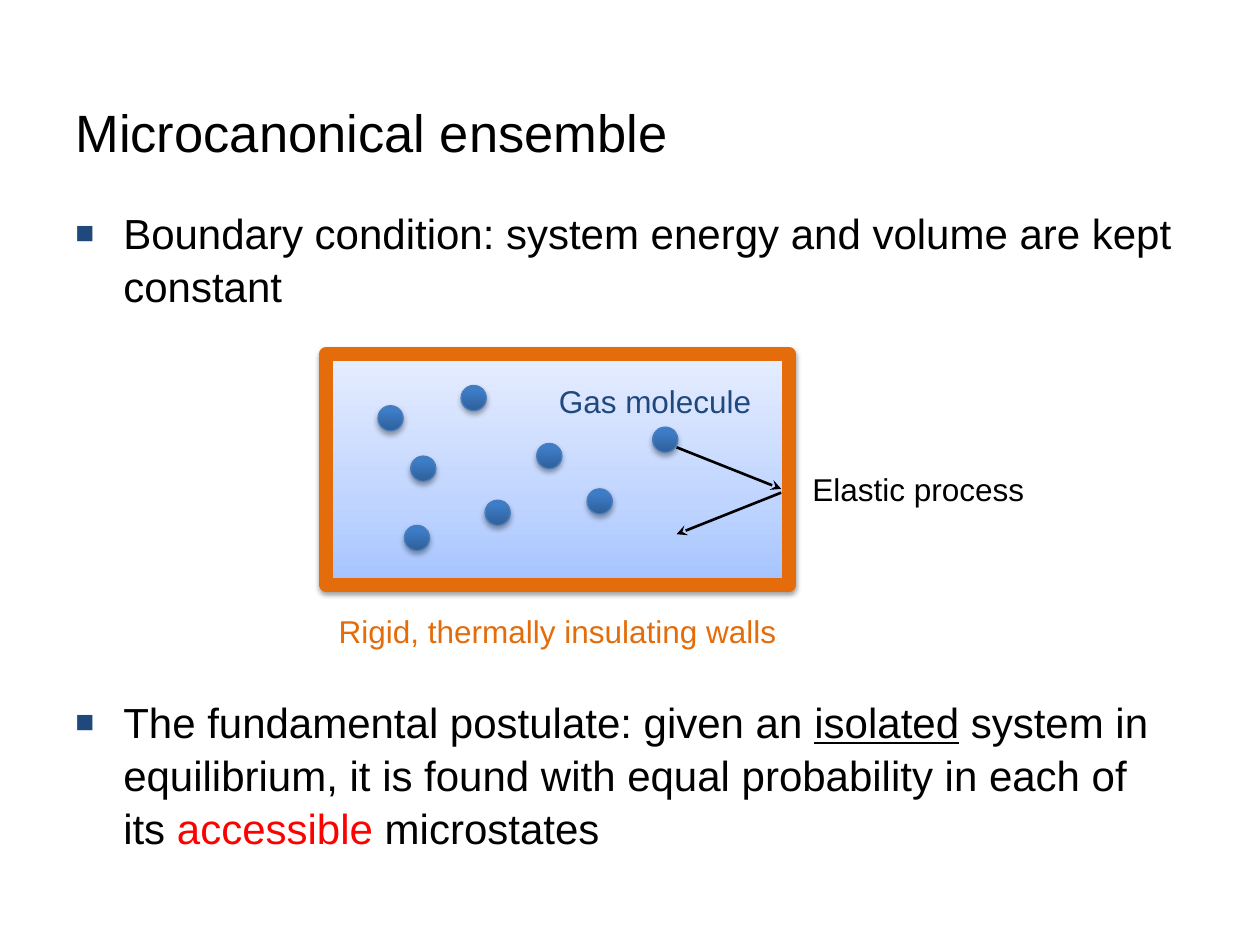
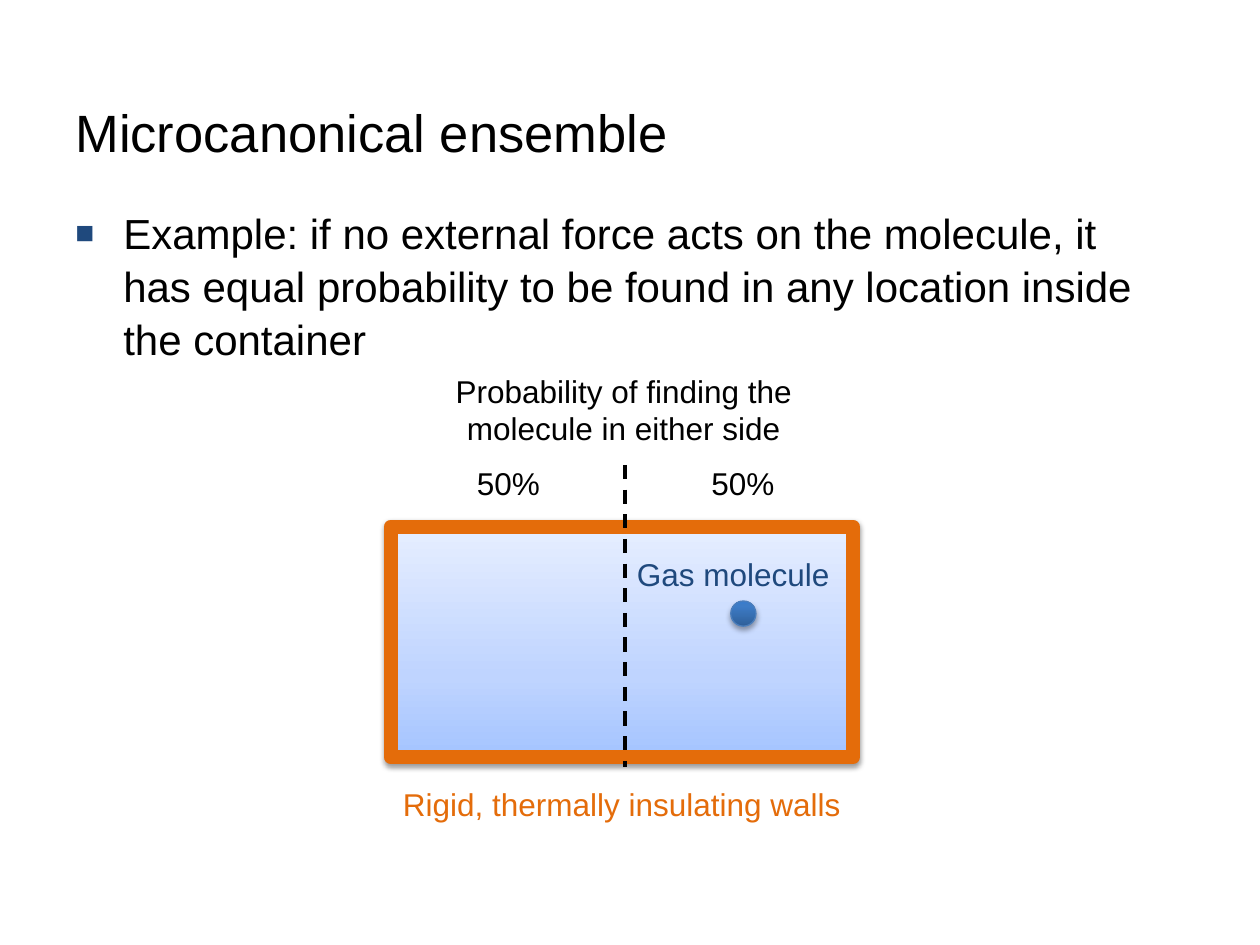
"""Two slides on the microcanonical ensemble: gas molecules in an insulated container."""
from lxml import etree
from pptx import Presentation
from pptx.dml.color import RGBColor
from pptx.enum.dml import MSO_LINE
from pptx.enum.shapes import MSO_CONNECTOR, MSO_SHAPE
from pptx.enum.text import MSO_ANCHOR, PP_ALIGN
from pptx.oxml.ns import qn
from pptx.util import Inches, Pt

BLACK = RGBColor(0x00, 0x00, 0x00)
RED = RGBColor(0xFF, 0x00, 0x00)
NAVY = RGBColor(0x1F, 0x49, 0x7D)
WALL = RGBColor(0xE4, 0x6C, 0x0A)
RIM = RGBColor(0x4B, 0x7E, 0xBC)
GAS_STOPS = [
    (0, RGBColor(0xA4, 0xC4, 0xFF)),
    (35, RGBColor(0xBF, 0xD4, 0xFF)),
    (100, RGBColor(0xE6, 0xEE, 0xFF)),
]
MOLECULE_STOPS = [
    (0, RGBColor(0x2F, 0x5F, 0x99)),
    (80, RGBColor(0x3D, 0x7C, 0xC7)),
    (100, RGBColor(0x3A, 0x7C, 0xCB)),
]

WIDTH, HEIGHT = 10, 7.5
MARGIN, BODY_TOP, BODY_WIDTH = 0.05 * WIDTH, 1.58, 8.92
TITLE_HEIGHT = BODY_TOP - MARGIN
BOX_WIDTH, BOX_HEIGHT = 3.67, 1.83
DIAMETER, LINE_HEIGHT, INDENT = 0.2, 0.4, 0.38
LABEL_SIZE = 18


def write(slide, area, runs, size=LABEL_SIZE, color=BLACK, align=PP_ALIGN.CENTER, wrap=False):
    """Place one paragraph of (text, color, underline) runs and return its frame."""
    frame = slide.shapes.add_textbox(*map(Inches, area)).text_frame
    frame.word_wrap = wrap
    paragraph = frame.paragraphs[0]
    paragraph.alignment = align
    paragraph.font.name = "Arial"
    paragraph.font.size = Pt(size)
    paragraph.font.color.rgb = color
    for text, tint, underline in runs:
        run = paragraph.add_run()
        run.text = text
        run.font.name = "Arial"
        run.font.size = Pt(size)
        run.font.color.rgb = tint or color
        if underline:
            run.font.underline = True
    return frame


def add_solid(slide, outline, area, stops, edge, edge_width, shade, drop):
    """Add a preset shape with an upward gradient, an edge and a soft shadow."""
    solid = slide.shapes.add_shape(outline, *map(Inches, area))
    solid.fill.gradient()
    solid.fill.gradient_angle = 90
    solid.line.color.rgb = edge
    solid.line.width = Pt(edge_width)
    solid.shadow.inherit = False
    properties = solid._element.spPr
    stop_list = properties.find(qn("a:gradFill")).find(qn("a:gsLst"))
    for old_stop in list(stop_list):
        stop_list.remove(old_stop)
    for position, tint in stops:
        stop = etree.SubElement(stop_list, qn("a:gs"), pos=str(position * 1000))
        etree.SubElement(stop, qn("a:srgbClr"), val=str(tint))
    shadow = etree.SubElement(
        properties.find(qn("a:effectLst")), qn("a:outerShdw"),
        blurRad=str(Pt(3.1)), dist=str(Pt(drop)), dir="5400000", rotWithShape="0")
    shadow_color = etree.SubElement(shadow, qn("a:srgbClr"), val=str(BLACK))
    etree.SubElement(shadow_color, qn("a:alpha"), val=str(shade * 1000))


BOUNDARY = [("Boundary condition: system energy and volume are kept constant", None, False)]
POSTULATE = [
    ("The fundamental postulate: given an ", None, False),
    ("isolated", None, True),
    (" system in equilibrium, it is found with equal probability in each of its ", None, False),
    ("accessible", RED, False),
    (" microstates", None, False),
]
EXAMPLE = [("Example: if no external force acts on the molecule, it has equal probability "
            "to be found in any location inside the container", None, False)]

ensembles = [
    ([(BODY_TOP, BOUNDARY), (5.46, POSTULATE)], (2.59, 2.81),
     [(5.18, 3.39), (3.26, 3.62), (3.85, 3.97), (3.66, 3.06),
      (4.66, 3.88), (3, 3.22), (4.26, 3.52), (3.21, 4.17)]),
    ([(BODY_TOP, EXAMPLE)], (3.1, 4.18), [(5.8, 4.77)]),
]

deck = Presentation()
deck.slide_width, deck.slide_height = Inches(WIDTH), Inches(HEIGHT)

for bullets, (box_left, box_top), molecules in ensembles:
    slide = deck.slides.add_slide(deck.slide_layouts[6])
    title = write(slide, (MARGIN, MARGIN, BODY_WIDTH, TITLE_HEIGHT),
                  [("Microcanonical ensemble", None, False)], 30, align=PP_ALIGN.LEFT, wrap=True)
    title.vertical_anchor = MSO_ANCHOR.MIDDLE

    for top, runs in bullets:
        point = write(slide, (MARGIN, top, BODY_WIDTH, 3 * LINE_HEIGHT + 0.1),
                      runs, 24, align=PP_ALIGN.LEFT, wrap=True).paragraphs[0]
        layout = point._p.get_or_add_pPr()
        layout.set("marL", str(Inches(INDENT)))
        layout.set("indent", str(-Inches(INDENT)))
        marks = [etree.Element(qn("a:buClr")),
                 etree.Element(qn("a:buSzPct"), val="75000"),
                 etree.Element(qn("a:buFont"), typeface="Arial"),
                 etree.Element(qn("a:buChar"), char="■")]
        etree.SubElement(marks[0], qn("a:srgbClr"), val=str(NAVY))
        for place, mark in enumerate(marks):
            layout.insert(place, mark)
        point.line_spacing = 1.05

    add_solid(slide, MSO_SHAPE.RECTANGLE, (box_left, box_top, BOX_WIDTH, BOX_HEIGHT),
              GAS_STOPS, WALL, 8, 38, 1.6)
    for left, top in molecules:
        add_solid(slide, MSO_SHAPE.OVAL, (left, top, DIAMETER, DIAMETER),
                  MOLECULE_STOPS, RIM, 0.75, 35, 1.8)

    named_left, named_top = molecules[0]
    write(slide, (box_left - 0.02, box_top + 2, BOX_WIDTH + 0.04, LINE_HEIGHT),
          [("Rigid, thermally insulating walls", None, False)], color=WALL)
    write(slide, (named_left - 0.85, named_top - 0.41, 1.74, LINE_HEIGHT),
          [("Gas molecule", None, False)], color=NAVY)

collision, halves = deck.slides
write(collision, (6.35, 3.68, 1.9, LINE_HEIGHT),
      [("Elastic process", None, False)], align=PP_ALIGN.LEFT)
for left in (3.68, 5.54):
    write(halves, (left, 3.63, 0.71, LINE_HEIGHT), [("50%", None, False)])
write(halves, (3.43, 2.9, 3.04, 0.71),
      [("Probability of finding the molecule in either side", None, False)], wrap=True)

strokes = [
    (collision, (5.37, 3.55, 6.2, 3.88), 1.5, True),
    (collision, (6.2, 3.91, 5.37, 4.24), 1.5, True),
    (halves, (4.96, 3.69, 4.96, 6.09), 2, False),
]
for slide, ends, weight, is_arrow in strokes:
    stroke = slide.shapes.add_connector(MSO_CONNECTOR.STRAIGHT, *map(Inches, ends))
    stroke.line.color.rgb = BLACK
    stroke.line.width = Pt(weight)
    if is_arrow:
        etree.SubElement(stroke.line._get_or_add_ln(), qn("a:tailEnd"), type="stealth")
    else:
        stroke.line.dash_style = MSO_LINE.DASH
    etree.SubElement(stroke._element.spPr, qn("a:effectLst"))

deck.save("out.pptx")
